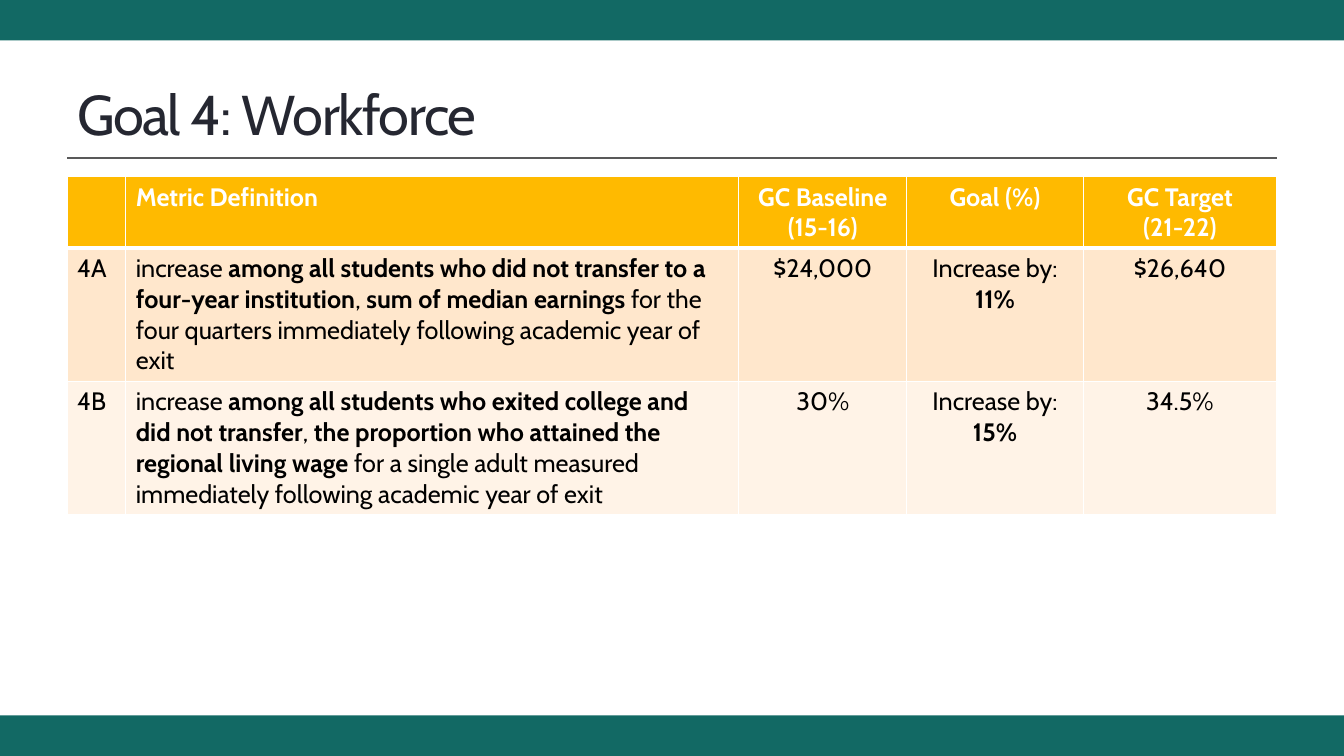
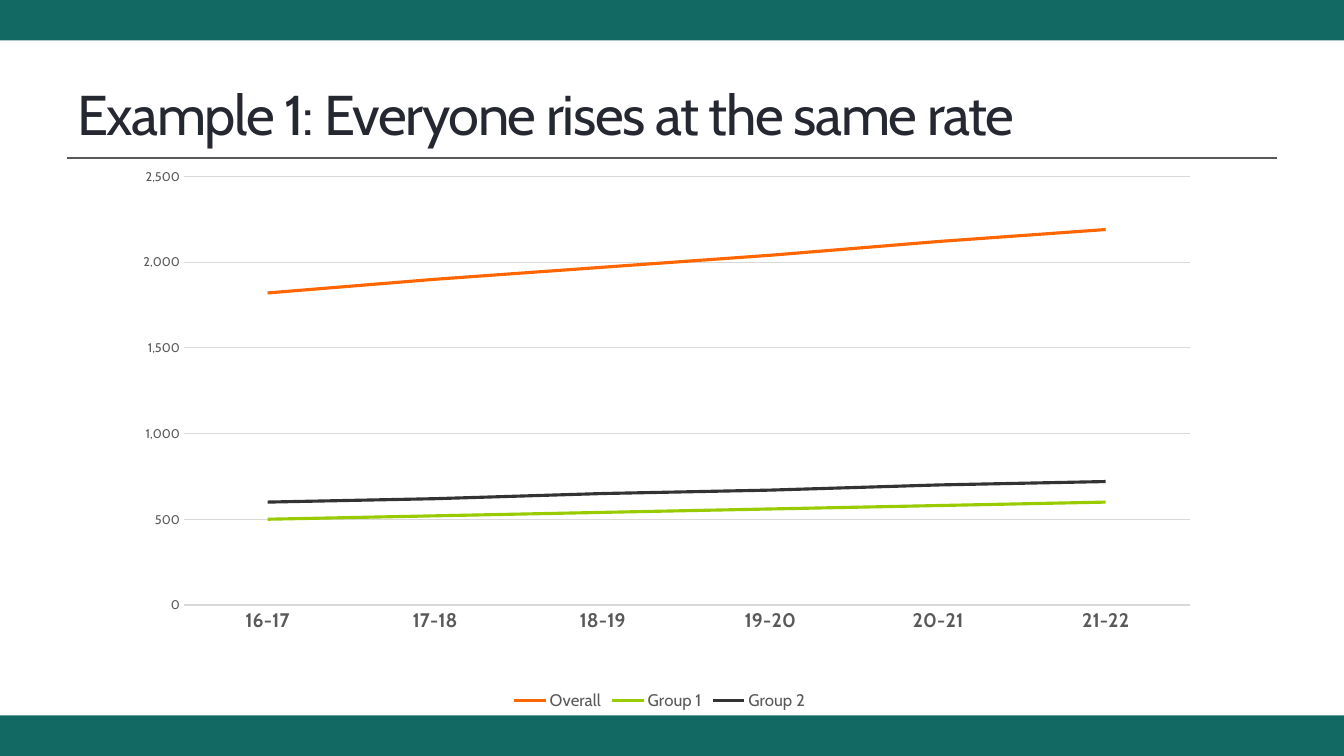
"""Build a goal table slide and a growth chart slide in one shared style."""
from dataclasses import dataclass

from lxml.etree import SubElement
from pptx import Presentation
from pptx.chart.data import CategoryChartData as Data
from pptx.dml.color import RGBColor as Rgb
from pptx.enum.chart import XL_CHART_TYPE as Kind, XL_LEGEND_POSITION as Spot, XL_TICK_MARK as Tick
from pptx.enum.shapes import MSO_CONNECTOR as Link, MSO_SHAPE as Form
from pptx.enum.text import MSO_ANCHOR as Anchor, MSO_AUTO_SIZE as Fit, PP_ALIGN as Align
from pptx.oxml.ns import qn
from pptx.util import Cm, Pt

FONT = "Cabin"
HUES = {
    "band": "126964", "rule": "595959", "title": "252731", "head": "FFBA00",
    "odd": "FFE7CC", "even": "FFF3E7", "white": "FFFFFF", "black": "000000",
    "grid": "D9D9D9", "label": "595959",
    "orange": "FF6600", "green": "99CC00", "dark": "333333",
}
WIDE, HIGH, EDGE, BAND = 33.87, 19.05, 1.69, 1.02
SPAN = 30.48


@dataclass
class Row:
    fill: str
    ink: str
    bold: bool
    high: float
    cells: tuple[str, ...]


@dataclass
class Trend:
    name: str
    hue: str
    vals: tuple[int, ...]


COLS = (1.48, 15.45, 4.23, 4.45, 4.87)
ROWS = (
    Row("head", "white", True, 1.75,
        ("", "Metric Definition", "GC Baseline\n(15-16)", "Goal (%)", "GC Target\n(21-22)")),
    Row("odd", "black", False, 3.35,
        ("4A",
         "increase *among all students who did not transfer to a four-year institution*, "
         "*sum of median earnings *for the four quarters immediately following academic year of exit",
         "$24,000", "Increase by:\n*11%*", "$26,640")),
    Row("even", "black", False, 3.35,
        ("4B",
         "increase *among all students who exited college and did not transfer*, "
         "*the proportion who attained the regional living wage* for a single adult measured "
         "immediately following academic year of exit",
         "30%", "Increase by:\n*15%*", "34.5%")),
)
YEARS = ("16-17", "17-18", "18-19", "19-20", "20-21", "21-22")
TRENDS = (
    Trend("Overall", "orange", (1820, 1900, 1970, 2040, 2120, 2190)),
    Trend("Group 1", "green", (500, 520, 540, 560, 580, 600)),
    Trend("Group 2", "dark", (600, 620, 650, 670, 700, 720)),
)
PLOT = {"x": 0.054, "y": 0.015, "w": 0.943, "h": 0.785}


def tint(name: str) -> Rgb:
    """Return the named colour."""
    return Rgb.from_string(HUES[name])


def style(font, size: float, hue: str, bold: bool = False) -> None:
    """Set face, size, colour and weight of a font."""
    font.name, font.size, font.bold = FONT, Pt(size), bold
    font.color.rgb = tint(hue)


def stroke(line, hue: str, width: float) -> None:
    """Set colour and width of a line."""
    line.color.rgb = tint(hue)
    line.width = Pt(width)


def write(frame, text: str, *, size: float = 18, hue: str = "black", bold: bool = False,
          align: Align = Align.LEFT, space: int = 0) -> None:
    """Write paragraphs in which asterisks switch the weight."""
    for num, words in enumerate(text.split("\n")):
        para = frame.add_paragraph() if num else frame.paragraphs[0]
        para.alignment = align
        for turn, part in enumerate(words.split("*")):
            if part:
                run = para.add_run()
                run.text = part
                style(run.font, size, hue, bold != bool(turn % 2))
                if space:
                    run._r.get_or_add_rPr().set("spc", str(space))


def start(deck, text: str):
    """Add a slide with bands, rule and title."""
    slide = deck.slides.add_slide(deck.slide_layouts[5])
    for top in (0, HIGH - BAND):
        band = slide.shapes.add_shape(Form.RECTANGLE, 0, Cm(top), Cm(WIDE), Cm(BAND))
        band.shadow.inherit = False
        band.fill.solid()
        band.fill.fore_color.rgb = tint("band")
        band.line.fill.background()
    rule = slide.shapes.add_connector(Link.STRAIGHT, Cm(EDGE), Cm(3.98), Cm(EDGE + SPAN), Cm(3.98))
    stroke(rule.line, "rule", 1)
    SubElement(rule._element.spPr, qn("a:effectLst"))
    title = slide.shapes.title
    title.left, title.top, title.width, title.height = Cm(EDGE), Cm(1.47), Cm(SPAN), Cm(2.74)
    frame = title.text_frame
    frame.word_wrap, frame.auto_size = True, Fit.NONE
    frame.vertical_anchor = Anchor.MIDDLE
    write(frame, text, size=40, hue="title", space=-100)
    return slide


def border(cell, side: str, width: float) -> None:
    """Draw one white cell border."""
    line = SubElement(cell._tc.get_or_add_tcPr(), qn(f"a:ln{side}"), w=str(Pt(width)))
    fill = SubElement(line, qn("a:solidFill"))
    SubElement(fill, qn("a:srgbClr"), val=HUES["white"])


def fill_table(slide) -> None:
    """Add the table of metrics."""
    high = sum(row.high for row in ROWS)
    table = slide.shapes.add_table(
        len(ROWS), len(COLS), Cm(EDGE), Cm(4.45), Cm(SPAN), Cm(high)).table
    table.first_row = table.horz_banding = False
    for col, width in zip(table.columns, COLS):
        col.width = Cm(width)
    for y, row in enumerate(ROWS):
        table.rows[y].height = Cm(row.high)
        for x, text in enumerate(row.cells):
            cell = table.cell(y, x)
            for side, thick in (("L", False), ("R", False), ("T", y == 1), ("B", y == 0)):
                border(cell, side, 3 if thick else 1)
            cell.fill.solid()
            cell.fill.fore_color.rgb = tint(row.fill)
            write(cell.text_frame, text, hue=row.ink, bold=row.bold,
                  align=Align.CENTER if x > 1 else Align.LEFT)


def place(chart) -> None:
    """Fix the inner plot area of a chart."""
    area = chart._chartSpace.chart.plotArea
    for old in area.findall(qn("c:layout")):
        area.remove(old)
    layout = SubElement(area, qn("c:layout"))
    area.insert(0, layout)
    manual = SubElement(layout, qn("c:manualLayout"))
    SubElement(manual, qn("c:layoutTarget"), val="inner")
    for key in "xy":
        SubElement(manual, qn(f"c:{key}Mode"), val="edge")
    for key, val in PLOT.items():
        SubElement(manual, qn(f"c:{key}"), val=str(val))


def draw_chart(slide) -> None:
    """Add the line chart of trends."""
    data = Data(number_format="#,##0")
    data.categories = YEARS
    for trend in TRENDS:
        data.add_series(trend.name, trend.vals)
    chart = slide.shapes.add_chart(
        Kind.LINE, Cm(3.18), Cm(4.24), Cm(26.88), Cm(13.76), data).chart
    chart.has_title = False
    style(chart.font, 10, "black")
    chart.has_legend = True
    chart.legend.position = Spot.BOTTOM
    chart.legend.include_in_layout = False
    style(chart.legend.font, 12, "label")
    cats, vals = chart.category_axis, chart.value_axis
    for axis, size, bold in ((cats, 14, True), (vals, 9, False)):
        axis.major_tick_mark = axis.minor_tick_mark = Tick.NONE
        style(axis.tick_labels.font, size, "label", bold)
    stroke(cats.format.line, "grid", 0.75)
    vals.format.line.fill.background()
    vals.has_major_gridlines = True
    stroke(vals.major_gridlines.format.line, "grid", 0.75)
    vals.minimum_scale, vals.maximum_scale, vals.major_unit = 0, 2500, 500
    vals.tick_labels.number_format = "#,##0"
    vals.tick_labels.number_format_is_linked = False
    plot = chart.plots[0]
    plot.vary_by_categories = False
    for line, trend in zip(plot.series, TRENDS):
        line.smooth = False
        stroke(line.format.line, trend.hue, 2.25)
    place(chart)


def main() -> None:
    """Build and save the deck."""
    deck = Presentation()
    deck.slide_width, deck.slide_height = Cm(WIDE), Cm(HIGH)
    fill_table(start(deck, "Goal 4: Workforce"))
    draw_chart(start(deck, "Example 1: Everyone rises at the same rate"))
    deck.save("out.pptx")


if __name__ == "__main__":
    main()
